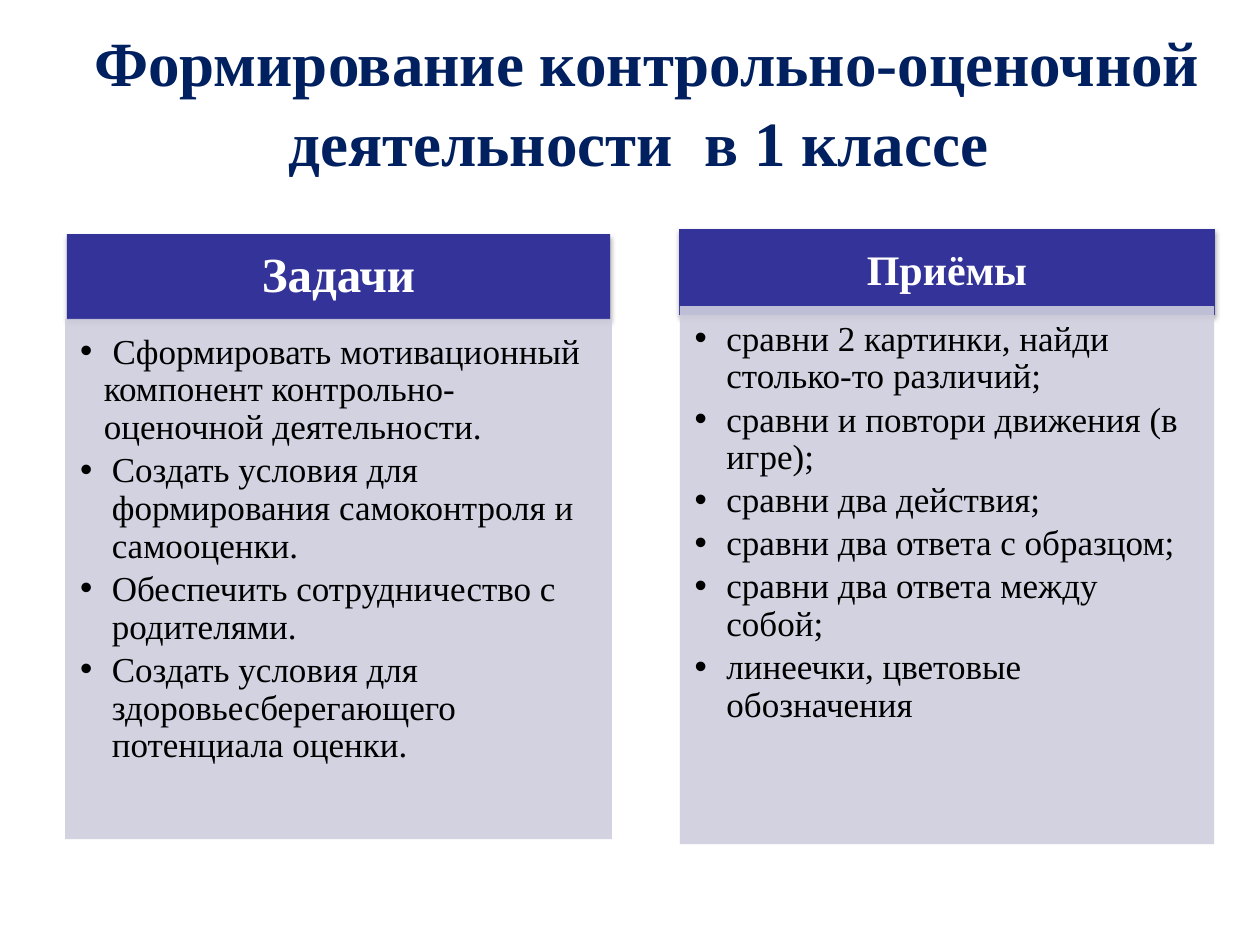
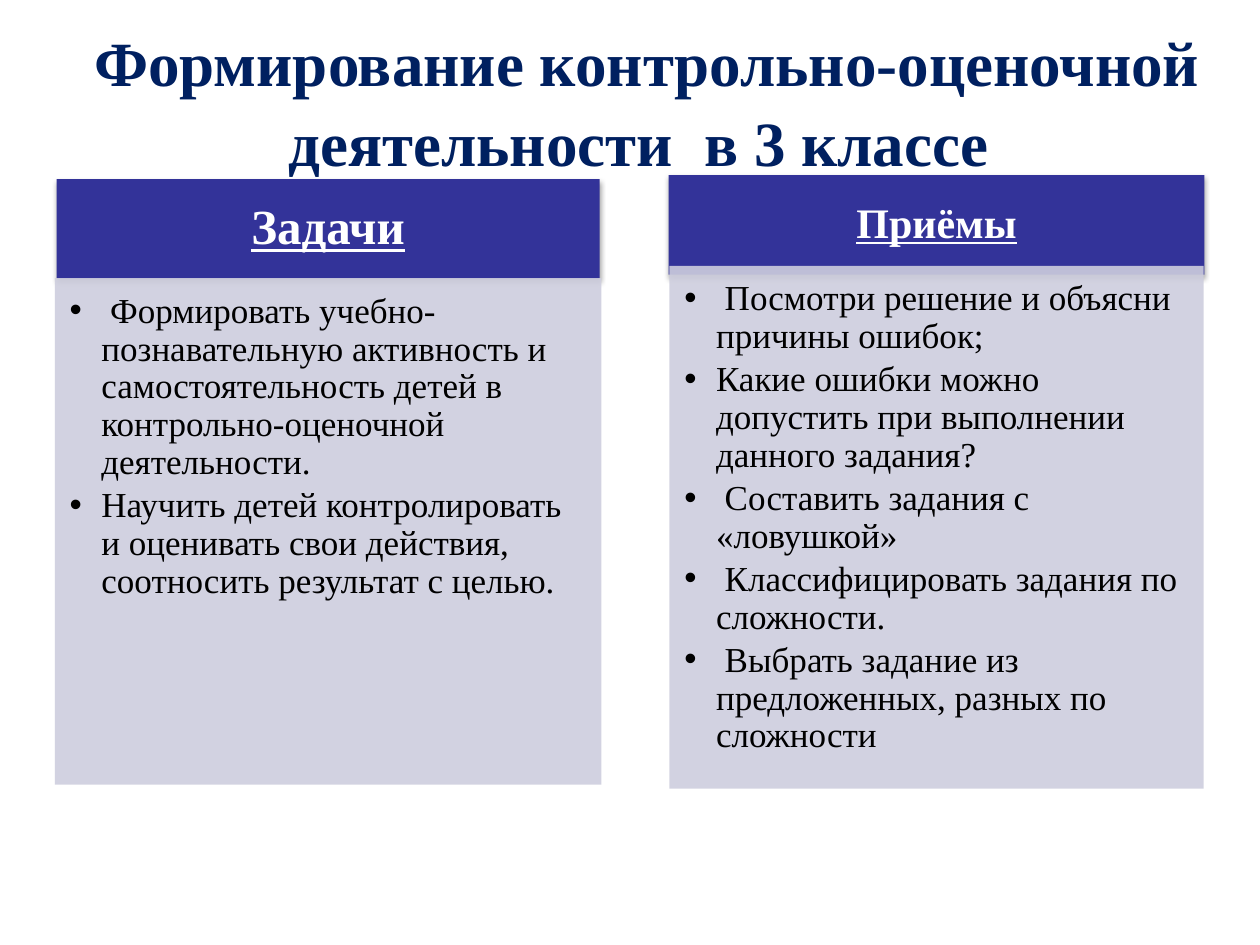
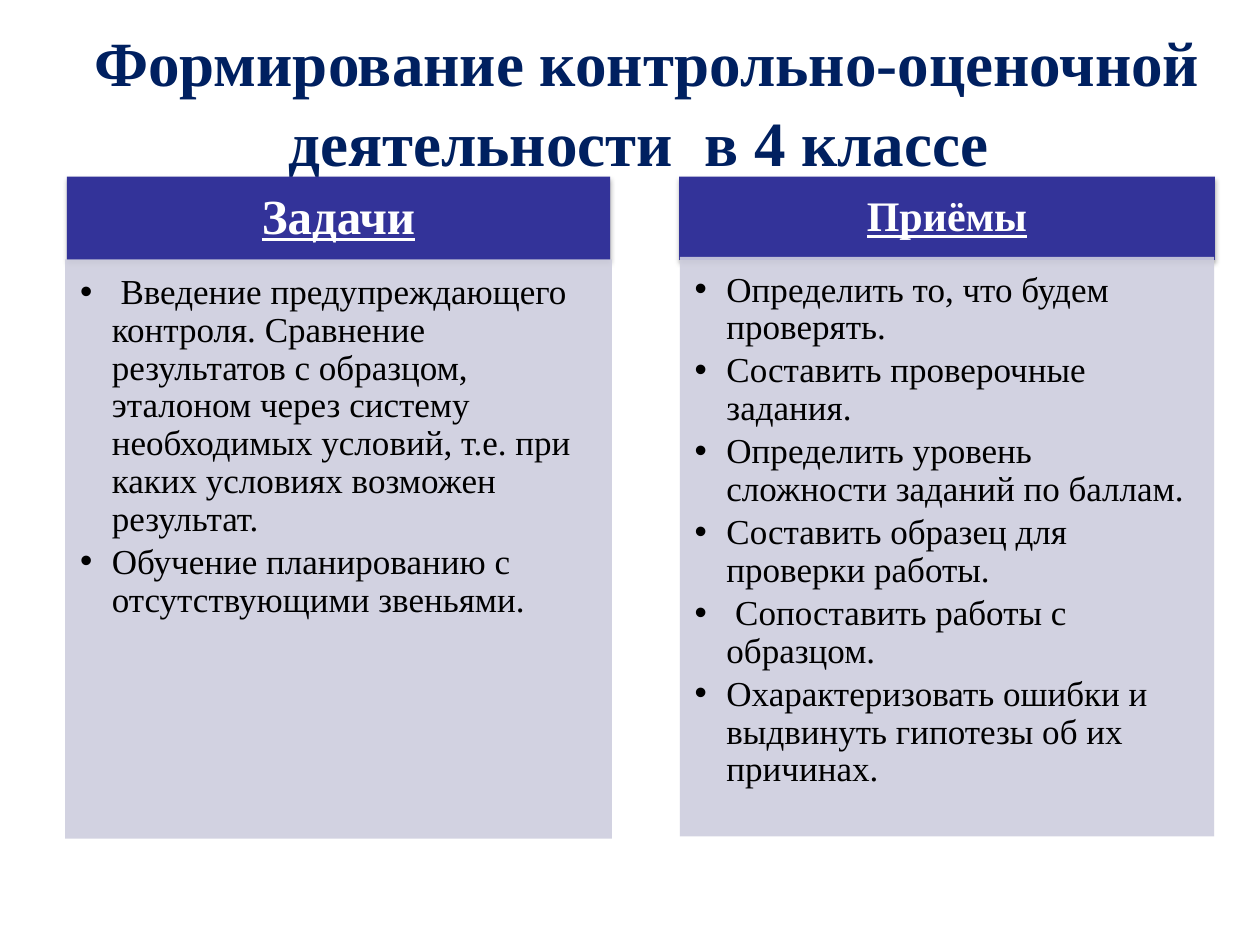
from dataclasses import dataclass

from lxml import etree
from pptx import Presentation
from pptx.dml.color import RGBColor
from pptx.enum.shapes import MSO_SHAPE
from pptx.enum.text import MSO_ANCHOR, MSO_AUTO_SIZE, PP_ALIGN
from pptx.oxml import parse_xml
from pptx.oxml.ns import nsdecls, qn
from pptx.util import Cm, Pt

RECT = MSO_SHAPE.RECTANGLE
TOP, MIDDLE = MSO_ANCHOR.TOP, MSO_ANCHOR.MIDDLE
CENTER, LEFT = PP_ALIGN.CENTER, PP_ALIGN.LEFT


@dataclass(frozen=True)
class Theme:
    font: str = "Times New Roman"
    navy: RGBColor = RGBColor(0x00, 0x20, 0x60)
    band: RGBColor = RGBColor(0x33, 0x33, 0x99)
    panel: RGBColor = RGBColor(0xCE, 0xCE, 0xDE)
    white: RGBColor = RGBColor(0xFF, 0xFF, 0xFF)
    black: RGBColor = RGBColor(0x00, 0x00, 0x00)
    title: int = 36
    tasks: int = 28
    ways: int = 24
    body: int = 20


THEME = Theme()
TITLE = "Формирование контрольно-оценочной деятельности  в {} классе "
INDENT = 0.64
TIGHT = 0.48

COLUMNS = [
    dict(name="Задачи", size=THEME.tasks, shift=0, head=10.95, body=11.02, pad=(0.56, 0.3)),
    dict(name="Приёмы", size=THEME.ways, shift=12.34, head=10.8, body=10.77, pad=(0.48, 0.28)),
]

SLIDES = [
    dict(
        grade=1, left=1.35, head=1.73, under=False, first=TIGHT,
        rows=[(4.72, 6.43, 10.49), (4.62, 6.17, 10.85)],
        lists=[
            [
                " Сформировать мотивационный компонент контрольно-оценочной деятельности.",
                "Создать условия для формирования самоконтроля и самооценки.",
                "Обеспечить сотрудничество с родителями.",
                "Создать условия для здоровьесберегающего потенциала оценки.",
            ],
            [
                "сравни 2 картинки, найди столько-то различий;",
                "сравни и повтори движения (в игре);",
                "сравни два действия;",
                "сравни два ответа с образцом;",
                "сравни два ответа между собой;",
                "линеечки, цветовые обозначения",
            ],
        ],
    ),
    dict(
        grade=3, left=1.14, head=2.01, under=True, first=INDENT,
        rows=[(3.61, 5.61, 10.21), (3.53, 5.36, 10.54)],
        lists=[
            [
                " Формировать учебно-познавательную активность и самостоятельность детей в контрольно-оценочной деятельности.",
                "Научить детей контролировать и оценивать свои действия, соотносить результат с целью.",
            ],
            [
                " Посмотри решение и объясни причины ошибок;",
                "Какие ошибки можно допустить при выполнении данного задания?",
                " Составить задания с «ловушкой»",
                " Классифицировать задания по сложности.",
                " Выбрать задание из предложенных, разных по сложности",
            ],
        ],
    ),
    dict(
        grade=4, left=1.35, head=1.68, under=True, first=INDENT,
        rows=[(3.56, 5.23, 11.68), (3.56, 5.18, 11.68)],
        lists=[
            [
                " Введение предупреждающего контроля. Сравнение результатов с образцом, эталоном через систему необходимых условий, т.е. при каких условиях возможен результат.",
                "Обучение планированию с отсутствующими звеньями.",
            ],
            [
                "Определить то, что будем проверять.",
                "Составить проверочные задания.",
                "Определить уровень сложности заданий по баллам.",
                "Составить образец для проверки работы.",
                " Сопоставить работы с образцом.",
                "Охарактеризовать ошибки и выдвинуть гипотезы об их причинах.",
            ],
        ],
    ),
]


def set_font(para, size, color, bold=False, under=None):
    font = para.font
    font.name = THEME.font
    font.size = Pt(size)
    font.color.rgb = color
    font.bold = bold
    font.underline = under


def set_frame(frame, pads, anchor):
    frame.word_wrap = True
    frame.auto_size = MSO_AUTO_SIZE.NONE
    frame.vertical_anchor = anchor
    (frame.margin_left, frame.margin_top,
     frame.margin_right, frame.margin_bottom) = map(Cm, pads)


def add_box(slide, place, color):
    box = slide.shapes.add_shape(RECT, *map(Cm, place))
    box.shadow.inherit = False
    box.fill.solid()
    box.fill.fore_color.rgb = color
    box.line.fill.background()
    return box


def add_shade(box):
    effects = box._element.spPr.find(qn("a:effectLst"))
    effects.append(parse_xml(
        f'<a:outerShdw {nsdecls("a")} blurRad="{Pt(3.1)}" dist="{Pt(1.8)}" '
        'dir="5400000" rotWithShape="0"><a:srgbClr val="000000">'
        '<a:alpha val="35000"/></a:srgbClr></a:outerShdw>'))


def add_bullet(para, indent):
    props = para._p.get_or_add_pPr()
    props.set("marL", str(Cm(indent)))
    props.set("indent", str(-Cm(indent)))
    etree.SubElement(props, qn("a:buFont")).set("typeface", "Arial")
    etree.SubElement(props, qn("a:buChar")).set("char", "•")


def add_title(slide, grade):
    title = slide.shapes.title
    title.left, title.top, title.width, title.height = map(Cm, (1.19, 1.52, 23.7, 1.75))
    set_frame(title.text_frame, (0.25, 0.13, 0.25, 0.91), MIDDLE)
    para = title.text_frame.paragraphs[0]
    para.text = TITLE.format(grade)
    para.alignment = CENTER
    para.line_spacing = 1.05
    set_font(para, THEME.title, THEME.navy, bold=True)


def add_head(slide, place, col, under):
    head = add_box(slide, place, THEME.band)
    add_shade(head)
    set_frame(head.text_frame, col["pad"] * 2, MIDDLE)
    para = head.text_frame.paragraphs[0]
    para.text = col["name"]
    para.alignment = CENTER
    para.line_spacing = 0.9
    set_font(para, col["size"], THEME.white, True, under)


def add_body(slide, place, items, first):
    body = add_box(slide, place, THEME.panel)
    tint = body._element.spPr.find(qn("a:solidFill"))[0]
    etree.SubElement(tint, qn("a:alpha")).set("val", "90000")
    frame = body.text_frame
    set_frame(frame, (0.3, 0.3, 0.4, 0.43), TOP)
    for i, item in enumerate(items):
        para = frame.add_paragraph() if i else frame.paragraphs[0]
        para.text = item
        para.alignment = LEFT
        para.line_spacing = 0.9
        para.space_after = Pt(3)
        add_bullet(para, INDENT if i else first)
        set_font(para, THEME.body, THEME.black)


def add_page(deck, page):
    slide = deck.slides.add_slide(deck.slide_layouts[5])
    add_title(slide, page["grade"])
    firsts = (page["first"], INDENT)
    for col, row, items, first in zip(COLUMNS, page["rows"], page["lists"], firsts):
        top, low, tall = row
        left = page["left"] + col["shift"]
        add_head(slide, (left, top, col["head"], page["head"]), col, page["under"])
        mid = left + (col["head"] - col["body"]) / 2
        add_body(slide, (mid, low, col["body"], tall), items, first)


def main():
    deck = Presentation()
    deck.slide_width, deck.slide_height = Cm(25.4), Cm(19.05)
    for page in SLIDES:
        add_page(deck, page)
    deck.save("out.pptx")


if __name__ == "__main__":
    main()
